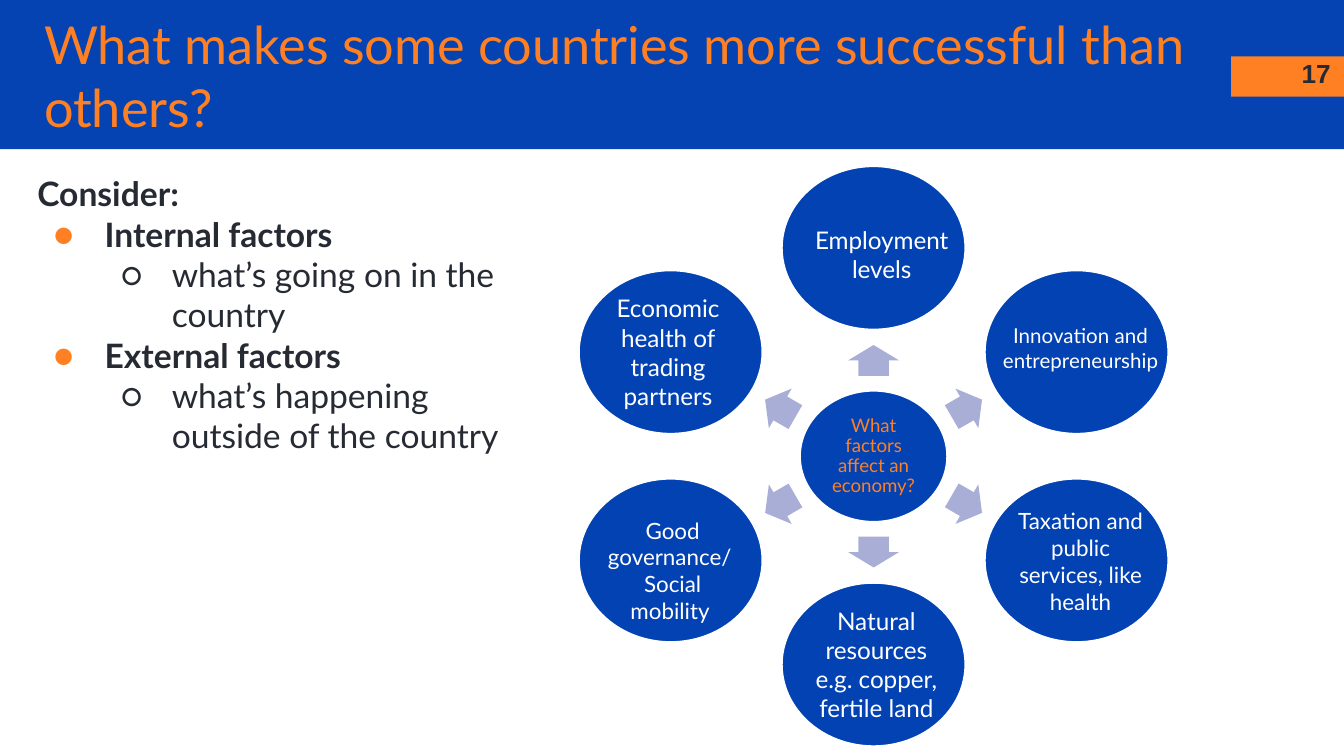
from math import cos, pi, sin

from lxml.etree import SubElement
from pptx import Presentation
from pptx.dml.color import RGBColor
from pptx.enum.shapes import MSO_SHAPE as Shape
from pptx.enum.text import MSO_ANCHOR as Anchor, PP_ALIGN as Align
from pptx.oxml.ns import qn
from pptx.util import Inches, Pt

HEADER_BLUE = RGBColor(0x05, 0x43, 0xB3)
CIRCLE_BLUE = RGBColor(0x02, 0x42, 0xB3)
ORANGE = RGBColor(0xFF, 0x80, 0x22)
LILAC = RGBColor(0xA8, 0xAE, 0xD5)
INK = RGBColor(0x26, 0x2A, 0x33)
WHITE = RGBColor(0xFF, 0xFF, 0xFF)

COLUMNS, ROWS = 100, 56.25
UNIT = Inches(0.1)
PADDING = 1
NODE_WIDTH, NODE_HEIGHT = 13.8, 12.3
HUB_WIDTH, HUB_HEIGHT = 11.1, 9.9
ARROW_ORBIT = 0.46

FACTORS = [
    (["Employment levels"], 13, (0.6, 0.5, 12.8, 6.4)),
    (["Innovation and entrepreneurship"], 11, (0.3, -0.3, 13.9, 5.7)),
    (["Taxation and public services, like health"], 12, (0.3, 0.1, 12.8, 10.1)),
    (["Natural resources e.g. copper, fertile land"], 13, (0.2, 0.05, 11.9, 10.8)),
    (["Good governance/ ", "Social mobility "], 12, (0.15, 0.8, 11.9, 10.1)),
    (["Economic health of trading partners"], 13, (-0.2, 0.05, 12.8, 10.8)),
]

CONSIDERATIONS = [
    ("Internal factors", "what’s going on in the country"),
    ("External factors", "what’s happening outside of the country"),
]


def to_lengths(box):
    return [round(value * UNIT) for value in box]


def centred(x, y, width, height):
    return x - width / 2, y - height / 2, width, height


def add_filled(slide, kind, box, color, outline=None):
    shape = slide.shapes.add_shape(kind, *to_lengths(box))
    shape.shadow.inherit = False
    shape.fill.solid()
    shape.fill.fore_color.rgb = color
    if outline:
        shape.line.color.rgb = outline
        shape.line.width = Pt(2)
    else:
        shape.line.fill.background()
    return shape


def add_frame(slide, box, anchor=Anchor.TOP, padding=PADDING):
    frame = slide.shapes.add_textbox(*to_lengths(box)).text_frame
    margin = round(padding * UNIT)
    settings = {
        "word_wrap": True,
        "vertical_anchor": anchor,
        "margin_left": margin,
        "margin_top": margin,
        "margin_right": margin,
        "margin_bottom": margin,
    }
    for name, value in settings.items():
        setattr(frame, name, value)
    return frame


def write(paragraph, text, size, color, align=Align.LEFT, font="Lato", bold=False):
    paragraph.alignment = align
    run = paragraph.add_run()
    run.text = text
    values = {"name": font, "size": Pt(size), "bold": bold}
    for name, value in values.items():
        setattr(run.font, name, value)
    run.font.color.rgb = color


def add_bullet(paragraph, character, color, level):
    paragraph.level = level
    properties = paragraph._p.get_or_add_pPr()
    properties.set("marL", str(Inches(0.5 * (level + 1))))
    properties.set("indent", str(-Inches(0.38)))
    bullet_color = SubElement(properties, qn("a:buClr"))
    SubElement(bullet_color, qn("a:srgbClr"), val=str(color))
    SubElement(properties, qn("a:buFont"), typeface="Lato")
    SubElement(properties, qn("a:buChar"), char=character)


def add_header(slide, box):
    left, top, width, height = box
    right = left + width
    add_filled(slide, Shape.RECTANGLE, box, HEADER_BLUE)
    add_filled(slide, Shape.RECTANGLE, (right - 8.4, top + 4.2, 8.4, 3), ORANGE)
    number = add_frame(slide, (right - 6, top + 3.3, 6, 4.3))
    write(number.paragraphs[0], "17", 14, INK, Align.RIGHT, "Arial", True)
    title = add_frame(slide, (left + 2.3, top + 2.8, 87.4, 5.6), Anchor.MIDDLE)
    write(title.paragraphs[0], "What makes some countries more successful than others?", 28, ORANGE)


def add_considerations(slide, box):
    frame = add_frame(slide, box)
    write(frame.paragraphs[0], "Consider:", 18, INK, bold=True)
    for heading, detail in CONSIDERATIONS:
        levels = [(heading, "●", ORANGE, True), (detail, "○", INK, False)]
        for level, (text, character, color, bold) in enumerate(levels):
            paragraph = frame.add_paragraph()
            add_bullet(paragraph, character, color, level)
            write(paragraph, text, 18, INK, bold=bold)


def add_hub(slide, x, y):
    box = centred(x, y, HUB_WIDTH, HUB_HEIGHT)
    add_filled(slide, Shape.OVAL, box, CIRCLE_BLUE, WHITE)
    label_box = centred(x, y, HUB_WIDTH * 0.71, HUB_HEIGHT * 0.71)
    paragraph = add_frame(slide, label_box, Anchor.MIDDLE, 0.1).paragraphs[0]
    paragraph.line_spacing = 0.9
    write(paragraph, "What factors affect an economy?", 10, ORANGE, Align.CENTER)


def add_arrow(slide, x, y, degrees):
    size = (2.3, 3.8) if degrees % 180 == 90 else (2.6, 3.4)
    arrow = add_filled(slide, Shape.RIGHT_ARROW, centred(x, y, *size), LILAC)
    arrow.adjustments[0] = 0.6
    arrow.adjustments[1] = 0.5
    arrow.rotation = degrees % 360


def add_factor(slide, x, y, lines, size, label):
    add_filled(slide, Shape.OVAL, centred(x, y, NODE_WIDTH, NODE_HEIGHT), CIRCLE_BLUE, WHITE)
    shift_x, shift_y, width, height = label
    frame = add_frame(slide, centred(x + shift_x, y + shift_y, width, height))
    for index, line in enumerate(lines):
        paragraph = frame.add_paragraph() if index else frame.paragraphs[0]
        write(paragraph, line, size, WHITE, Align.CENTER)


def add_factor_wheel(slide, box):
    left, top, width, height = box
    x, y = left + width / 2, top + height / 2
    radius_x = (width - NODE_WIDTH) / 2 / cos(pi / 6)
    radius_y = (height - NODE_HEIGHT) / 2
    add_hub(slide, x, y)
    step = 360 // len(FACTORS)
    for index, factor in enumerate(FACTORS):
        degrees = index * step - 90
        angle = degrees * pi / 180
        reach_x, reach_y = radius_x * cos(angle), radius_y * sin(angle)
        add_arrow(slide, x + reach_x * ARROW_ORBIT, y + reach_y * ARROW_ORBIT, degrees)
        add_factor(slide, x + reach_x, y + reach_y, *factor)


def main():
    presentation = Presentation()
    presentation.slide_width = round(COLUMNS * UNIT)
    presentation.slide_height = round(ROWS * UNIT)
    slide = presentation.slides.add_slide(presentation.slide_layouts[6])
    add_header(slide, (0, 0, COLUMNS, 11.1))
    add_factor_wheel(slide, (43, 12.3, 44, 43.3))
    add_considerations(slide, (1.8, 11.9, 39.2, 29))
    presentation.save("out.pptx")


if __name__ == "__main__":
    main()
